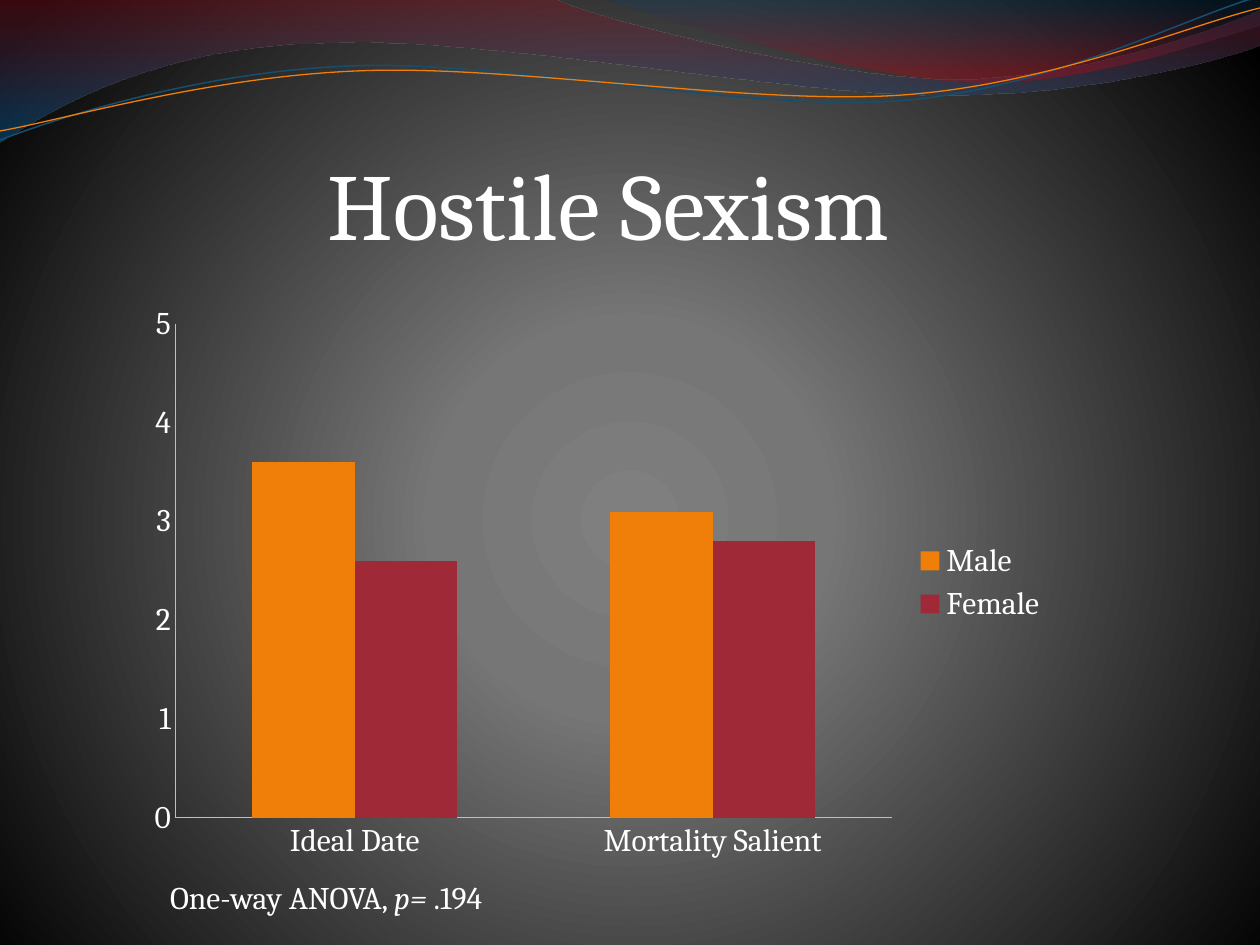
from lxml import etree
from pptx import Presentation
from pptx import util as u
from pptx.chart.data import CategoryChartData
from pptx.dml.color import RGBColor
from pptx.enum import chart as charts, text
from pptx.oxml.ns import nsdecls, qn

EMU = 914400 / 126  # one px
THEME = {
    "font": "Cambria", "title": 54, "body": 18,
    "text": RGBColor.from_string("FFFFFF"),
    "axis": RGBColor.from_string("BFBFBF"),
    "male": RGBColor.from_string("F07F09"),
    "female": RGBColor.from_string("9F2936"),
    "blue line": RGBColor.from_string("184E6D"),
    "orange line": RGBColor.from_string("F07F09"),
    "background": [(0, "7F7F7F", 100), (25, "767676", 100), (100, "000000", 100)],
    "wide wave": [(0, "7E1621", 45), (100, "005689", 55)],
    "right wave": [(0, "094467", 30), (80, "A10F1F", 45)],
}
DOWNWARD = '<a:lin ang="5400000" scaled="1"/>'
RADIAL = ('<a:path path="circle"><a:fillToRect l="10000" t="110000" '
          'r="10000" b="100000"/></a:path>')


def set_gradient(properties, stops, direction):
    """Swap the solid fill in properties for a gradient of (place, colour, opacity) stops."""
    marks = "".join(
        f'<a:gs pos="{place * 1000}"><a:srgbClr val="{colour}">'
        f'<a:alpha val="{opacity * 1000}"/></a:srgbClr></a:gs>'
        for place, colour, opacity in stops)
    gradient = etree.fromstring(
        f'<a:gradFill {nsdecls("a")} rotWithShape="1">'
        f'<a:gsLst>{marks}</a:gsLst>{direction}</a:gradFill>')
    properties.replace(properties.find(qn("a:solidFill")), gradient)


def add_curve(page, start, steps, close):
    """Draw steps of one point (straight) or three points (Bezier), given in px."""
    builder = page.shapes.build_freeform(round(start[0] * EMU), round(start[1] * EMU))
    builder.add_line_segments(
        [(round(x * EMU), round(y * EMU)) for step in steps for x, y in step], close=close)
    shape = builder.convert_to_shape()
    shape.shadow.inherit = False
    segments = iter(list(shape._element.spPr.iter(qn("a:lnTo"))))
    for step in steps:
        parts = [next(segments) for _ in step]
        if len(step) == 3:
            bezier = etree.Element(qn("a:cubicBezTo"))
            parts[0].addprevious(bezier)
            for part in parts:
                bezier.append(part[0])
                part.getparent().remove(part)
    return shape


deck = Presentation()
deck.slide_width, deck.slide_height = round(1260 * EMU), round(945 * EMU)
page = deck.slides.add_slide(deck.slide_layouts[6])
page.background.fill.solid()
set_gradient(page.background._cSld.bg.bgPr, THEME["background"], RADIAL)

# Filled waves along the top
waves = [
    ("wide wave", (0, 0), [
        [(554, -1)],
        [(600, 21), (837, 79), (955, 79)],
        [(1075, 79), (1207, 33), (1260, 11)],
        [(1261, 45)],
        [(1238, 55), (1096, 96), (940, 95)],
        [(784, 95), (481, 35), (324, 43)],
        [(163, 45), (58, 105), (-1, 142)]]),
    ("right wave", (604, -1), [
        [(641, 14), (859, 78), (969, 82)],
        [(1079, 87), (1211, 40), (1260, 26)],
        [(1260, 0)]]),
]
for name, start, steps in waves:
    wave = add_curve(page, start, steps, True)
    wave.fill.solid()
    set_gradient(wave._element.spPr, THEME[name], DOWNWARD)
    wave.line.fill.background()

# Thin lines following the waves
strands = [
    ("blue line", 0.85, (0, 140), [
        [(60, 117), (199, 72), (349, 66)],
        [(498, 59), (747, 112), (898, 101)],
        [(1050, 89), (1182, 19), (1257, -3)]]),
    ("orange line", 0.75, (0, 131), [
        [(59, 121), (207, 77), (357, 71)],
        [(508, 64), (752, 106), (903, 95)],
        [(1053, 84), (1186, 26), (1260, 8)]]),
]
for name, width, start, steps in strands:
    strand = add_curve(page, start, steps, False)
    strand.fill.background()
    strand.line.color.rgb = THEME[name]
    strand.line.width = u.Pt(width)

# Chart
data = CategoryChartData()
data.categories = ["Ideal Date", "Mortality Salient"]
data.add_series("Male", (3.6, 3.1))
data.add_series("Female", (2.6, 2.8))
place = [round(n * EMU) for n in (136, 294, 924, 577)]
chart = page.shapes.add_chart(charts.XL_CHART_TYPE.COLUMN_CLUSTERED, *place, data).chart
chart.font.name = THEME["font"]
chart.font.size = u.Pt(THEME["body"])
chart.font.color.rgb = THEME["text"]
chart.has_title = False
chart.has_legend = True
chart.legend.position = charts.XL_LEGEND_POSITION.RIGHT
chart.legend.include_in_layout = False
plot = chart.plots[0]
plot.vary_by_categories = False
plot.gap_width, plot.overlap = 150, 0
for series, name in zip(plot.series, ("male", "female")):
    series.format.fill.solid()
    series.format.fill.fore_color.rgb = THEME[name]
for axis in (chart.category_axis, chart.value_axis):
    axis.has_major_gridlines = False
    axis.major_tick_mark = axis.minor_tick_mark = charts.XL_TICK_MARK.NONE
    axis.format.line.color.rgb = THEME["axis"]
    axis.format.line.width = u.Pt(0.75)
scale = chart.value_axis
scale.minimum_scale, scale.maximum_scale, scale.major_unit = 0, 5, 1

# Title and test result
captions = [
    ((73, 126, 1071, 133), "title", text.PP_ALIGN.CENTER, text.MSO_ANCHOR.BOTTOM, 0,
     [("Hostile Sexism", False)]),
    ((158, 872, 1050, 50), "body", text.PP_ALIGN.LEFT, text.MSO_ANCHOR.TOP, 12,
     [("One-way ANOVA, ", False), ("p= ", True), (".194", False)]),
]
for place, size, align, anchor, inset, spans in captions:
    box = page.shapes.add_textbox(*[round(n * EMU) for n in place])
    frame = box.text_frame
    frame.word_wrap = True
    frame.vertical_anchor = anchor
    frame.margin_left = frame.margin_right = round(inset * EMU)
    frame.margin_top = frame.margin_bottom = round(inset / 2 * EMU)
    para = frame.paragraphs[0]
    para.alignment = align
    for words, italic in spans:
        span = para.add_run()
        span.text = words
        span.font.name = THEME["font"]
        span.font.size = u.Pt(THEME[size])
        span.font.color.rgb = THEME["text"]
        span.font.italic = italic

deck.save("out.pptx")
